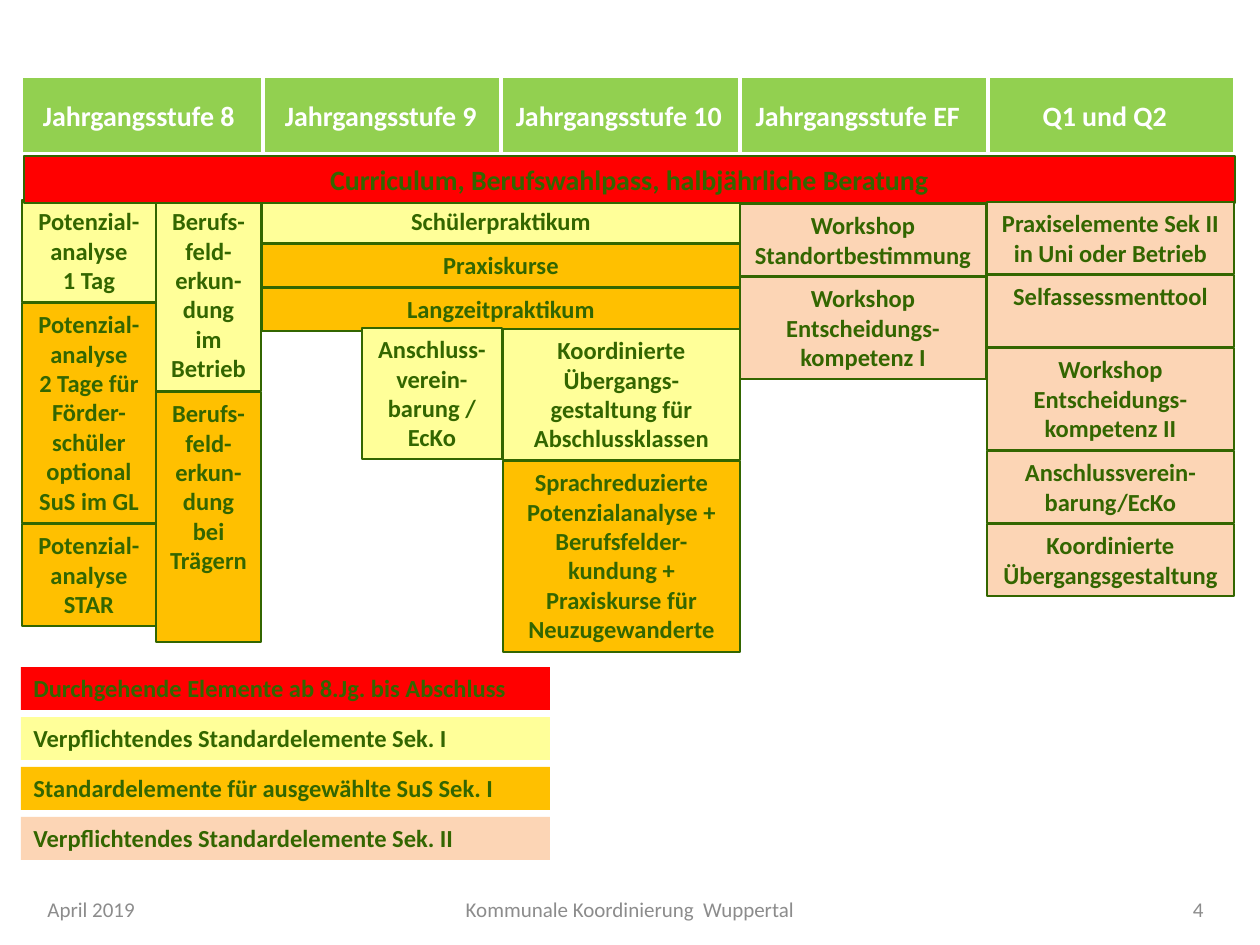
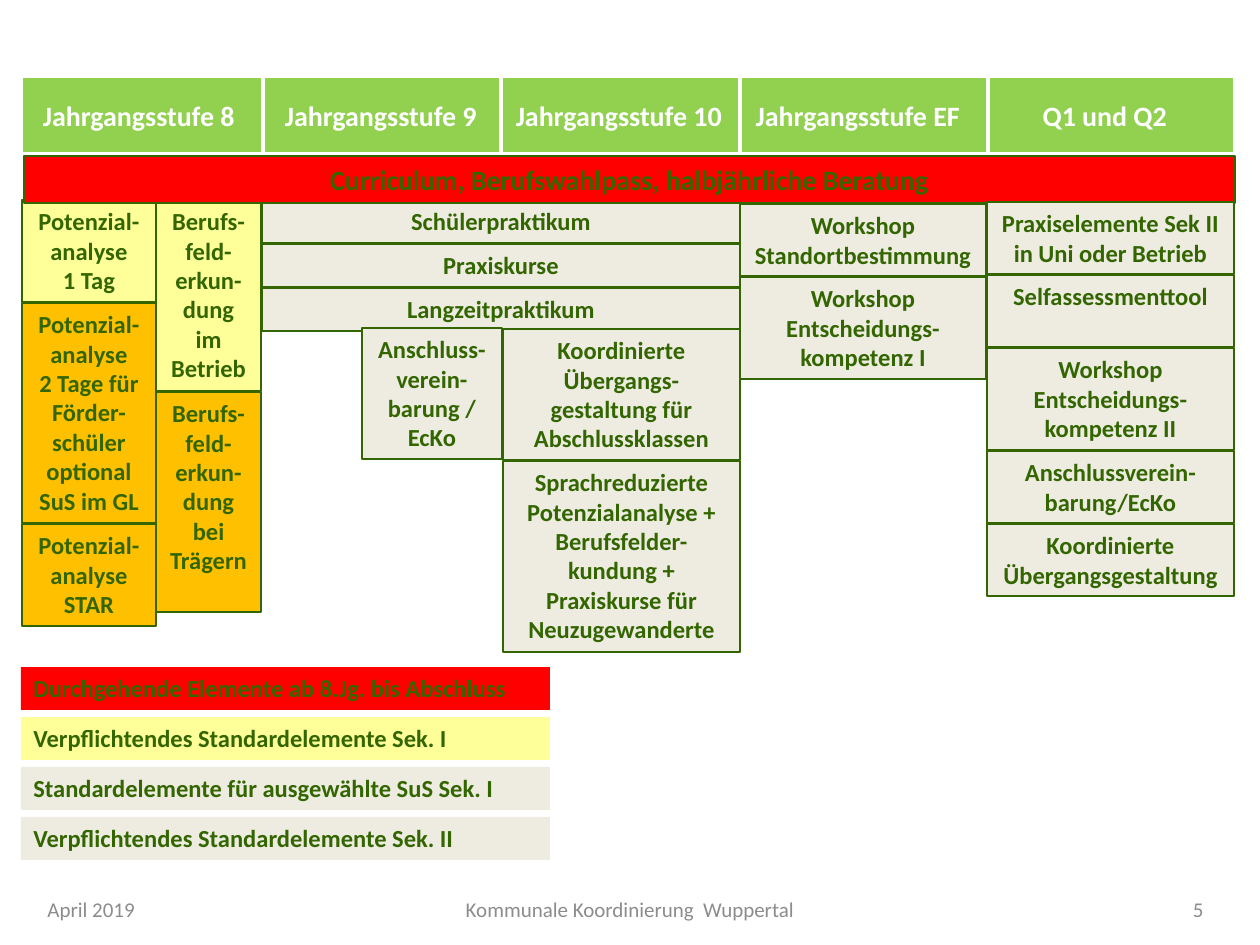
import pptx
import pptx.util
import pptx.dml.color
import pptx.enum.shapes
import pptx.enum.text

PX = 914400 // 126
ALIGN = pptx.enum.text.PP_ALIGN
ANCHOR = pptx.enum.text.MSO_ANCHOR

FILLS = {"all": "FF0000", "must": "FFFF99", "some": "FFC000", "upper": "FCD5B5"}
GREEN, DARK, WHITE, GREY, PALE = "92D050", "336600", "FFFFFF", "8C8C8C", "EEECE1"

HEAD = {"size": 16, "bold": True, "color": WHITE, "align": ALIGN.CENTER, "anchor": ANCHOR.MIDDLE}
BAND = {"size": 16, "bold": True, "color": DARK, "align": ALIGN.CENTER, "anchor": ANCHOR.TOP}
CELL = {**BAND, "size": 14}
KEY = {**CELL, "align": ALIGN.LEFT}
FOOT = {"size": 12, "bold": False, "color": GREY, "anchor": ANCHOR.MIDDLE}

PAGES = [
    {"num": "4", "tall": 8, "muted": False},
    {"num": "5", "tall": 7, "muted": True},
]

HEADS = [
    (21, "Jahrgangsstufe 8"),
    (263, "Jahrgangsstufe 9"),
    (501, "Jahrgangsstufe 10"),
    (987, "Q1 und Q2"),
    (740, "Jahrgangsstufe EF"),
]

TITLE = "Curriculum, Berufswahlpass, halbjährliche Beratung"

EIGHT = [
    (22, 200, 134, [
        ("must", 3, "Potenzial-analyse\n1 Tag"),
        ("some", 7, "Potenzial-analyse\n2 Tage für Förder-schüler optional SuS im GL"),
        ("some", 3, "Potenzial-analyse STAR"),
    ]),
    (156, 200, 105, [
        ("must", 6, "Berufs-feld-erkun-dung\nim Betrieb"),
        ("some", "tall", "Berufs-feld-erkun-dung bei Trägern"),
    ]),
]

MIDDLE = [
    (262, 200, 478, [
        ("must", 1, "Schülerpraktikum"),
        ("some", 1, "Praxiskurse"),
        ("some", 1, "Langzeitpraktikum"),
    ]),
    (362, 328, 140, [
        ("must", 4, "Anschluss- verein-barung /\nEcKo"),
    ]),
    (503, 329, 237, [
        ("must", 4, "Koordinierte Übergangs-gestaltung für Abschlussklassen"),
        ("some", 6, "Sprachreduzierte Potenzialanalyse +\n"
                    "Berufsfelder-kundung + Praxiskurse für Neuzugewanderte"),
    ]),
]

UPPER = [
    (740, 204, 246, [
        ("upper", 2, "Workshop Standortbestimmung"),
        ("upper", 3, "Workshop Entscheidungs-kompetenz I"),
    ]),
    (987, 202, 247, [
        ("upper", 2, "Praxiselemente Sek II in Uni oder Betrieb"),
        ("upper", 2, "Selfassessmenttool"),
        ("upper", 3, "Workshop Entscheidungs-kompetenz II"),
        ("upper", 2, "Anschlussverein-barung/EcKo"),
        ("upper", 2, "Koordinierte Übergangsgestaltung"),
    ]),
]

LEGEND = [
    ("all", "Durchgehende Elemente ab 8.Jg. bis Abschluss"),
    ("must", "Verpflichtendes Standardelemente Sek. I"),
    ("some", "Standardelemente für ausgewählte SuS Sek. I"),
    ("upper", "Verpflichtendes Standardelemente Sek. II"),
]


def paint(color):
    return pptx.dml.color.RGBColor.from_string(color)


def write(shape, text, style):
    frame = shape.text_frame
    frame.word_wrap = True
    frame.vertical_anchor = style["anchor"]
    frame.text = text
    font = {"name": "Calibri", "size": pptx.util.Pt(style["size"]), "bold": style["bold"]}
    for para in frame.paragraphs:
        para.alignment = style["align"]
        for name, value in font.items():
            setattr(para.font, name, value)
        para.font.color.rgb = paint(style["color"])


def box(slide, area, text, fill, style, line=None, width=0.75):
    kind = pptx.enum.shapes.MSO_SHAPE.RECTANGLE
    shape = slide.shapes.add_shape(kind, *(n * PX for n in area))
    shape.shadow.inherit = False
    shape.fill.solid()
    shape.fill.fore_color.rgb = paint(fill)
    if line:
        shape.line.color.rgb = paint(line)
        shape.line.width = pptx.util.Pt(width)
    else:
        shape.line.fill.background()
    write(shape, text, style)
    return shape


def stack(slide, columns, page, muted):
    for left, top, wide, cells in columns:
        y = top
        for kind, rows, text in cells:
            high = round(13 + 29.6 * page.get(rows, rows))
            fill = PALE if muted else FILLS[kind]
            box(slide, (left, y, wide, high), text, fill, CELL, DARK)
            y += high + 1


def footer(slide, num):
    parts = [
        (35, 159, "April 2019", ALIGN.LEFT),
        (382, 496, "Kommunale Koordinierung  Wuppertal", ALIGN.CENTER),
        (1057, 159, num, ALIGN.RIGHT),
    ]
    for left, wide, text, align in parts:
        area = (left, 890, wide, 39)
        shape = slide.shapes.add_textbox(*(n * PX for n in area))
        write(shape, text, {**FOOT, "align": align})


def build(deck, page):
    slide = deck.slides.add_slide(deck.slide_layouts[6])
    muted = page["muted"]
    footer(slide, page["num"])
    for left, text in HEADS:
        head = box(slide, (left, 76, 248, 78), text, GREEN, HEAD, WHITE, 2)
        head.text_frame.margin_left = 0
    stack(slide, EIGHT, page, False)
    stack(slide, MIDDLE, page, muted)
    box(slide, (24, 156, 1211, 47), TITLE, FILLS["all"], BAND, DARK)
    stack(slide, UPPER, page, muted)
    for row, (kind, text) in enumerate(LEGEND):
        fill = PALE if muted and kind in ("some", "upper") else FILLS[kind]
        box(slide, (21, 667 + 50 * row, 529, 43), text, fill, KEY)


def main():
    deck = pptx.Presentation()
    deck.slide_width = 1260 * PX
    deck.slide_height = 945 * PX
    for page in PAGES:
        build(deck, page)
    deck.save("out.pptx")


if __name__ == "__main__":
    main()
